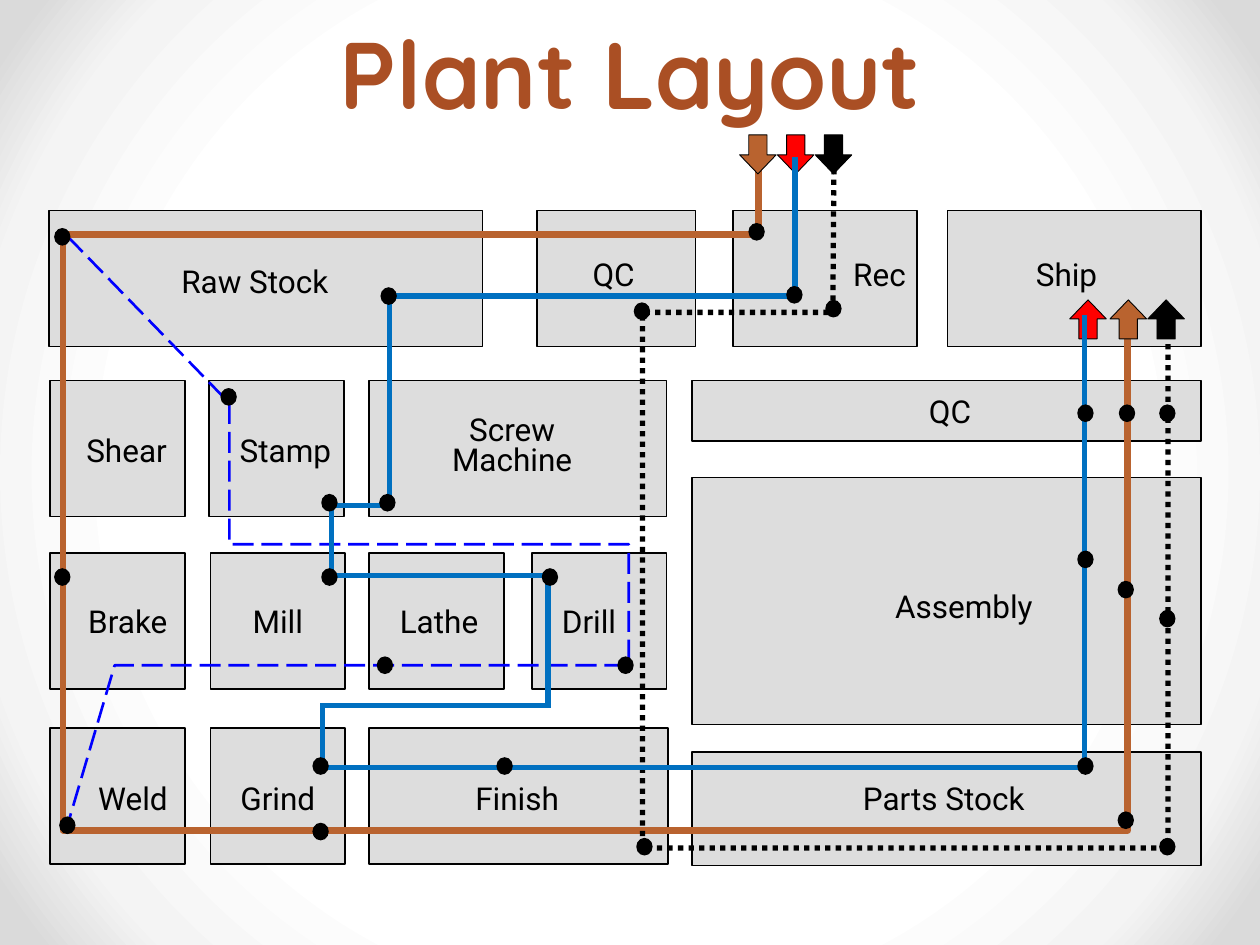
"""Build the Plant Layout slide: rooms, flow routes and stops."""
import itertools
import pptx
import pptx.dml.color
import pptx.enum.dml
import pptx.enum.shapes
import pptx.enum.text
import pptx.oxml
import pptx.oxml.ns
import pptx.util

RGB = pptx.dml.color.RGBColor
BLACK, GREY = RGB(0, 0, 0), RGB(0xDD, 0xDD, 0xDD)
RUST, BROWN = RGB(0xAA, 0x4F, 0x24), RGB(0xB9, 0x63, 0x2F)
RED, BLUE, NAVY = RGB(0xFF, 0, 0), RGB(0, 0x70, 0xC0), RGB(0, 0, 0xFF)
GLOW = [(64, "FFFFFF"), (84, "F4F4F4"), (96, "DADADA")]

WIDE, HIGH = pptx.util.Inches(10), pptx.util.Inches(7.5)
CELL = WIDE / 100
KIND = pptx.enum.shapes.MSO_SHAPE
DASH = pptx.enum.dml.MSO_LINE
ALIGN = pptx.enum.text.PP_ALIGN

# Band: top, height, label top, then (name, left, width, label left, label width).
BANDS = [
    (16.7, 10.8, 20.3, [("Raw Stock", 3.9, 34.4, 13.4, 16.1), ("QC", 42.6, 12.6, 42.3, 12.8),
                        ("Rec", 58.2, 14.6, 64.4, 10.8), ("Ship", 75.2, 20.1, 78.3, 12.7)]),
    (30.2, 10.8, 34.3, [("Shear", 4, 10.7, 4.7, 10.7), ("Stamp", 16.6, 10.7, 16.4, 12.5)]),
    (30.2, 10.8, 32.6, [("Screw Machine", 29.3, 23.6, 33.5, 14.3)]),
    (30.2, 4.8, 31.2, [("QC", 54.9, 40.4, 69, 12.8)]),
    (37.9, 19.6, 46.7, [("Assembly", 54.9, 40.4, 68.2, 16.6)]),
    (43.9, 10.8, 47.9, [("Brake", 4, 10.7, 4.8, 10.7), ("Mill", 16.7, 10.7, 16.7, 10.7),
                        ("Lathe", 29.3, 10.7, 29.5, 10.7), ("Drill", 42.2, 10.7, 41.4, 10.7)]),
    (57.8, 10.8, 61.9, [("Weld", 4, 10.7, 5.2, 10.7), ("Grind", 16.7, 10.7, 15.8, 12.5),
                        ("Finish", 29.3, 23.7, 33.9, 14.3)]),
    (59.7, 9, 61.9, [("Parts Stock", 54.9, 40.4, 65.2, 19.4)]),
]
STAMPED = [(5.4, 18.8), (18.2, 32), (18.2, 43.2), (49.9, 43.2), (49.9, 52.8), (9.1, 52.8), (5.5, 65)]
WELDED = [(60.2, 11.3), (60.2, 18.6), (5, 18.6), (5, 65.9), (89.5, 65.9), (89.5, 24.3)]
BOUGHT = [(66.2, 12.6), (66.1, 24.8), (51, 24.8), (51, 67.3), (92.7, 67.3), (92.7, 24.8)]
TURNED = [(63.1, 12.7), (63.1, 23.5), (30.9, 23.5), (30.9, 40.1), (26.3, 40.1), (26.3, 45.7),
          (43.5, 45.7), (43.5, 56), (25.6, 56), (25.6, 60.9), (86.1, 60.9), (86.1, 25.2)]
GATES = [
    (KIND.DOWN_ARROW, 10.7, [(64.7, BLACK), (61.7, RED), (58.7, BROWN)]),
    (KIND.UP_ARROW, 23.8, [(88.1, BROWN), (84.9, RED), (91.1, BLACK)]),
]
STOPS = {
    17.7: [59.4], 18.1: [4.3], 22.7: [62.4], 22.8: [30.2], 23.8: [65.5], 24: [50.3],
    30.8: [17.5], 32.1: [85.5, 88.8, 92], 39.2: [25.5, 30.1], 43.7: [85.5],
    45.1: [4.3, 25.5, 43], 46.1: [88.7], 48.4: [92], 52.1: [29.9, 49],
    60.1: [24.8, 39.4, 85.5], 64.4: [88.7], 64.8: [4.7], 65.3: [24.8], 66.5: [50.5, 92],
}


def emu(*cells):
    return [round(n * CELL) for n in cells]


def shade(slide):
    stops = "".join(f'<a:gs pos="{at * 1000}"><a:srgbClr val="{tint}"/></a:gs>' for at, tint in GLOW)
    slide._element.cSld.insert(0, pptx.oxml.parse_xml(
        f'<p:bg {pptx.oxml.ns.nsdecls("p", "a")}><p:bgPr><a:gradFill rotWithShape="1">'
        f'<a:gsLst>{stops}</a:gsLst><a:path path="circle"><a:fillToRect l="50000" t="50000" '
        'r="50000" b="50000"/></a:path></a:gradFill><a:effectLst/></p:bgPr></p:bg>'))


def block(slide, kind, box, fill, width=0):
    shape = slide.shapes.add_shape(kind, *emu(*box))
    shape.shadow.inherit = False
    shape.fill.solid()
    shape.fill.fore_color.rgb = fill
    if width:
        shape.line.color.rgb = BLACK
        shape.line.width = pptx.util.Pt(width)
    else:
        shape.line.fill.background()
    return shape


def write(slide, text, box, face, size, tint, space):
    frame = slide.shapes.add_textbox(*emu(*box)).text_frame
    frame.word_wrap = True
    frame.text = text
    par = frame.paragraphs[0]
    par.alignment = ALIGN.CENTER
    par.line_spacing = space
    font = par.runs[0].font
    font.name, font.size, font.color.rgb = face, pptx.util.Pt(size), tint
    return frame


def ink(line, tint, width, dash=None):
    line.color.rgb = tint
    line.width = pptx.util.Pt(width)
    if dash:
        line.dash_style = dash


def route(slide, spots, tint, width, dash=None):
    first, *rest = [emu(*spot) for spot in spots]
    pen = slide.shapes.build_freeform(*first, scale=1.0)
    pen.add_line_segments(rest, close=False)
    shape = pen.convert_to_shape()
    shape.shadow.inherit = False
    shape.fill.background()
    ink(shape.line, tint, width, dash)


def chain(slide, spots, tint, width):
    group = slide.shapes.add_group_shape()
    for start, end in itertools.pairwise(spots):
        link = group.shapes.add_connector(
            pptx.enum.shapes.MSO_CONNECTOR.STRAIGHT, *emu(*start, *end))
        ink(link.line, tint, width)
        link.line._get_or_add_ln().set("cap", "sq")
        link._element.spPr.append(pptx.oxml.parse_xml(
            f'<a:effectLst {pptx.oxml.ns.nsdecls("a")}/>'))


def main():
    deck = pptx.Presentation()
    deck.slide_width, deck.slide_height = WIDE, HIGH
    slide = deck.slides.add_slide(deck.slide_layouts[6])
    shade(slide)

    title = write(slide, "Plant Layout", (5, 0, 90, 10.7), "Quicksand", 54, RUST, pptx.util.Pt(58))
    title.vertical_anchor = pptx.enum.text.MSO_ANCHOR.BOTTOM
    title.paragraphs[0].runs[0].font.bold = True

    for top, high, mark, rooms in BANDS:
        for name, left, wide, start, span in rooms:
            block(slide, KIND.RECTANGLE, (left, top, wide, high), GREY, 1)
            tall = 6.4 if name == "Screw Machine" else 3.7
            label = write(slide, name, (start, mark, span, tall), "Roboto", 18, BLACK, 0.8)
            if name == "Raw Stock":
                label.paragraphs[0].alignment = ALIGN.LEFT
                label.paragraphs[0].line_spacing = 1.0

    route(slide, STAMPED, NAVY, 1.5, DASH.LONG_DASH)
    route(slide, WELDED, BROWN, 4)
    for kind, top, gates in GATES:
        for left, tint in gates:
            gate = block(slide, kind, (left, top, 2.9, 3.1), tint, 0.5)
            gate.adjustments[0], gate.adjustments[1] = 0.5, 0.52
    route(slide, BOUGHT, BLACK, 3, DASH.ROUND_DOT)
    chain(slide, TURNED, BLUE, 3)
    for top, lefts in STOPS.items():
        for left in lefts:
            block(slide, KIND.OVAL, (left, top, 1.3, 1.4), BLACK)

    deck.save("out.pptx")


if __name__ == "__main__":
    main()
